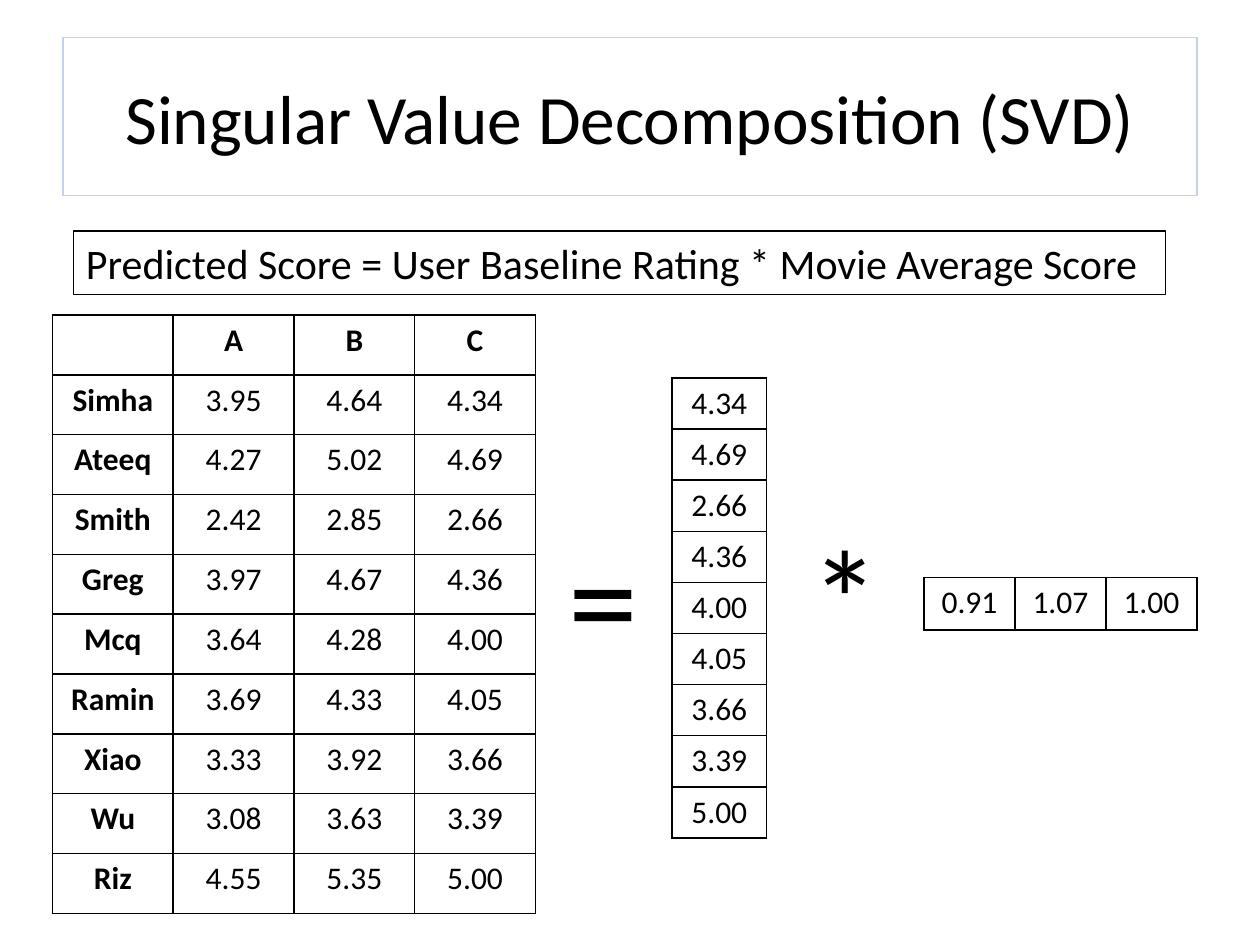
from lxml import etree
from pptx import Presentation
from pptx.enum import shapes, text
from pptx.dml import color
from pptx.oxml import ns
from pptx import util as u

COLORS = {"ink": "000000", "title_edge": "C2D1ED"}
MOVIES = ["A", "B", "C"]
RATINGS = {
    "Simha": ["3.95", "4.64", "4.34"],
    "Ateeq": ["4.27", "5.02", "4.69"],
    "Smith": ["2.42", "2.85", "2.66"],
    "Greg": ["3.97", "4.67", "4.36"],
    "Mcq": ["3.64", "4.28", "4.00"],
    "Ramin": ["3.69", "4.33", "4.05"],
    "Xiao": ["3.33", "3.92", "3.66"],
    "Wu": ["3.08", "3.63", "3.39"],
    "Riz": ["4.55", "5.35", "5.00"],
}
MOVIE_AVERAGES = ["0.91", "1.07", "1.00"]


class SlideBuilder:
    """Holds the style and the current slide, and adds each kind of element."""

    font = "Calibri"

    def __init__(self, slide):
        self.slide = slide

    def rgb(self, name):
        return color.RGBColor.from_string(COLORS[name])

    def set_words(self, frame, words, size, align, bold=False):
        frame.text = words
        paragraph = frame.paragraphs[0]
        paragraph.alignment = align
        for run in paragraph.runs:
            run.font.name = self.font
            run.font.size = u.Pt(size)
            run.font.bold = bold
            run.font.color.rgb = self.rgb("ink")

    def outline(self, shape, name):
        shape.line.color.rgb = self.rgb(name)
        shape.line.width = u.Pt(0.75)

    def title(self, words, left, top, width, height):
        heading = self.slide.shapes.title
        heading.left, heading.top = u.Pt(left), u.Pt(top)
        heading.width, heading.height = u.Pt(width), u.Pt(height)
        self.outline(heading, "title_edge")
        self.set_words(heading.text_frame, words, 39.6, text.PP_ALIGN.CENTER)
        heading.text_frame.vertical_anchor = text.MSO_ANCHOR.MIDDLE

    def formula(self, words, left, top, width, height):
        box = self.slide.shapes.add_shape(
            shapes.MSO_SHAPE.RECTANGLE, u.Pt(left), u.Pt(top), u.Pt(width), u.Pt(height))
        box.shadow.inherit = False
        box.fill.background()
        self.outline(box, "ink")
        self.set_words(box.text_frame, words, 24, text.PP_ALIGN.LEFT)
        box.text_frame.vertical_anchor = text.MSO_ANCHOR.TOP

    def operator(self, symbol, left, top, width, height):
        box = self.slide.shapes.add_textbox(u.Pt(left), u.Pt(top), u.Pt(width), u.Pt(height))
        box.text_frame.word_wrap = True
        self.set_words(box.text_frame, symbol, 80, text.PP_ALIGN.LEFT)

    def border(self, cell):
        properties = cell._tc.get_or_add_tcPr()
        for position, side in enumerate(("a:lnL", "a:lnR", "a:lnT", "a:lnB")):
            edge = etree.Element(ns.qn(side), w=str(u.Pt(1)))
            fill = etree.SubElement(edge, ns.qn("a:solidFill"))
            etree.SubElement(fill, ns.qn("a:srgbClr"), val=COLORS["ink"])
            properties.insert(position, edge)

    def matrix(self, rows, left, top, width, height, headed=False):
        table = self.slide.shapes.add_table(
            len(rows), len(rows[0]), u.Pt(left), u.Pt(top), u.Pt(width), u.Pt(height)).table
        table.first_row = table.horz_banding = False
        for r, values in enumerate(rows):
            for c, value in enumerate(values):
                cell = table.cell(r, c)
                cell.fill.background()
                self.border(cell)
                is_heading = headed and (r == 0 or c == 0)
                self.set_words(cell.text_frame, value, 18, text.PP_ALIGN.CENTER, is_heading)


def main():
    deck = Presentation()
    deck.slide_width, deck.slide_height = u.Pt(720), u.Pt(540)
    page = SlideBuilder(deck.slides.add_slide(deck.slide_layouts[5]))

    predictions = [["", *MOVIES]] + [[user, *scores] for user, scores in RATINGS.items()]
    baselines = [[scores[-1]] for scores in RATINGS.values()]

    page.title("Singular Value Decomposition (SVD)", 36, 21.6, 648, 90)
    page.matrix(predictions, 30, 180, 276, 342, headed=True)
    page.formula("Predicted Score = User Baseline Rating * Movie Average Score",
                 42, 132, 624, 36.35)
    page.matrix(baselines, 384, 216, 54, 263)
    page.matrix([MOVIE_AVERAGES], 528, 330, 156, 30)
    page.operator("=", 318, 288, 54, 104.2)
    page.operator("*", 456, 288, 48, 104.2)
    deck.save("out.pptx")


if __name__ == "__main__":
    main()
